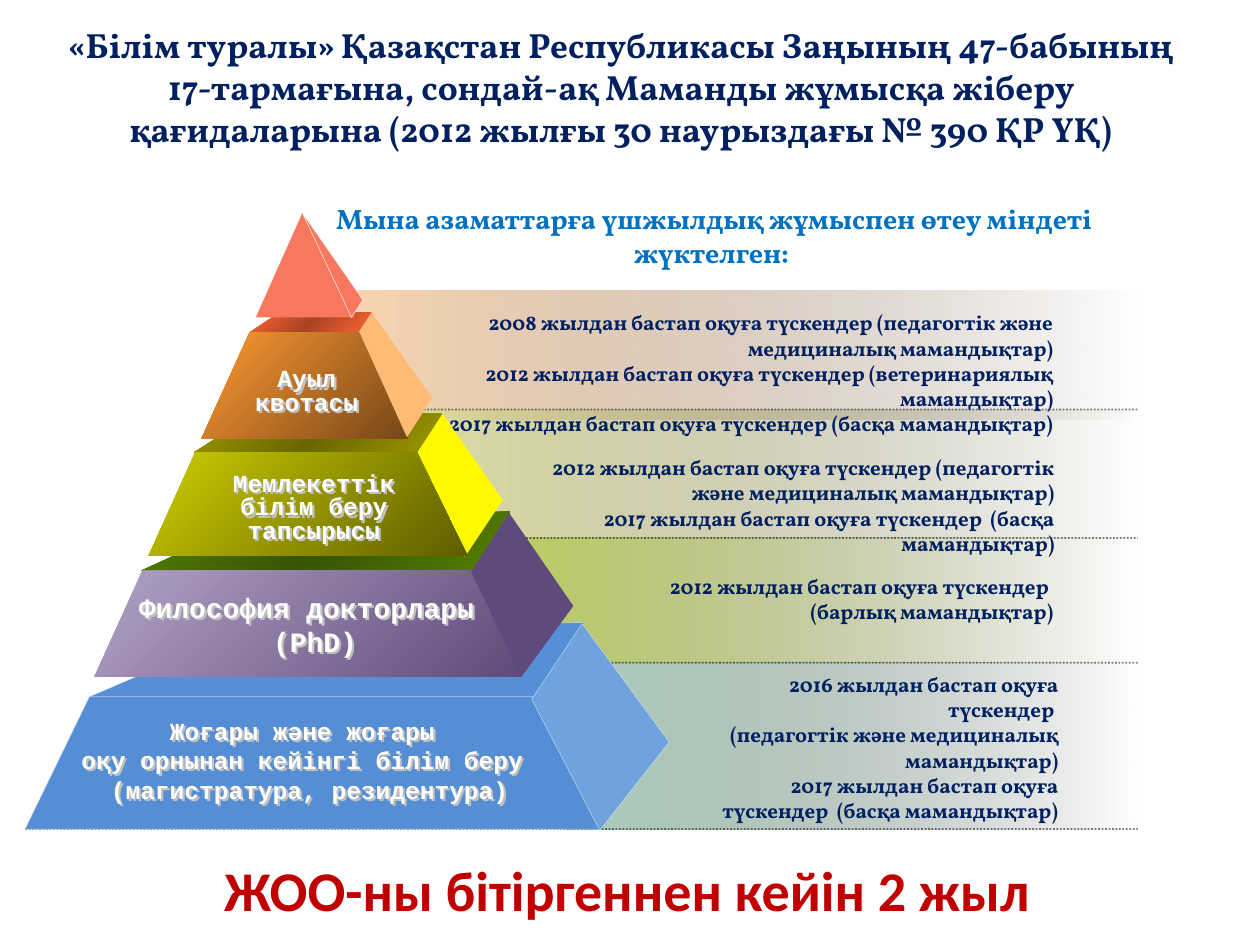
from dataclasses import dataclass

from lxml.etree import SubElement
from pptx import Presentation
from pptx.dml.color import RGBColor
from pptx.enum.dml import MSO_LINE
from pptx.enum.shapes import MSO_CONNECTOR, MSO_SHAPE
from pptx.enum.text import MSO_ANCHOR, PP_ALIGN
from pptx.oxml.ns import qn
from pptx.util import Pt

SCALE = 9144
CENTER, RIGHT = PP_ALIGN.CENTER, PP_ALIGN.RIGHT
TOP, MIDDLE = MSO_ANCHOR.TOP, MSO_ANCHOR.MIDDLE
RECT, LINE, DOTS = MSO_SHAPE.RECTANGLE, MSO_CONNECTOR.STRAIGHT, MSO_LINE.ROUND_DOT


@dataclass(frozen=True)
class Theme:
    """Fonts, type sizes and colours of the slide."""
    serif: str = "Vollkorn"
    mono: str = "Courier New"
    sans: str = "Calibri"
    title: int = 20
    lead: int = 16
    note: int = 12
    label: int = 14
    foot: int = 32
    navy: str = "002060"
    blue: str = "0070C0"
    red: str = "C00000"
    white: str = "FFFFFF"
    black: str = "000000"
    shade: str = "C0C0C0"
    edge: str = "C6D9F1"
    peach: tuple = ("FFD8B1", "766452")
    teal: tuple = ("ACCEBD", "505F57")
    sand: tuple = ("E2E0A0", "69684A")
    lime: tuple = ("BED25A", "58612A")
    sky: tuple = ("5590D7", "558ED5", "70A2DE")
    plum: tuple = ("B3A2C7", "604A7B")
    green: tuple = ("558000", "385500", "558000")
    moss: tuple = ("9E9A00", "696600", "9E9A00")
    gold: tuple = ("CCCC00", "5E5E00")
    lemon: str = "FEF800"
    rust: tuple = ("FF6535", "A94323", "FF6535")
    amber: tuple = ("FF9933", "764718")
    cream: str = "FFBA75"
    coral: str = "F7785F"


class Deck:
    """Draws each kind of element on the current slide."""

    def __init__(self, theme, wide, high):
        """Start a deck with one blank slide."""
        self.theme = theme
        self.file = Presentation()
        self.file.slide_width, self.file.slide_height = self.emu(wide, high)
        self.shapes = self.file.slides.add_slide(self.file.slide_layouts[6]).shapes

    def emu(self, *marks):
        """Turn px into EMU."""
        return [mark * SCALE for mark in marks]

    def paint(self, shape, fill, edge=None, angle=45, fade=False):
        """Fill a shape with one colour or a gradient."""
        shape.shadow.inherit = False
        if isinstance(fill, str):
            shape.fill.solid()
            shape.fill.fore_color.rgb = RGBColor.from_string(fill)
        else:
            shape.fill.gradient()
            shape.fill.gradient_angle = (360 - angle) % 360
            stops = shape.element.spPr.find(".//" + qn("a:gsLst"))
            stops.clear()
            for rank, tone in enumerate(fill):
                stop = SubElement(stops, qn("a:gs"), pos=str(100000 * rank // (len(fill) - 1)))
                color = SubElement(stop, qn("a:srgbClr"), val=tone)
            if fade:
                SubElement(color, qn("a:alpha"), val="0")
        if edge:
            shape.line.color.rgb = RGBColor.from_string(edge)
            shape.line.width = Pt(0.25)
        else:
            shape.line.fill.background()

    def band(self, box, fill):
        """Add a band that fades out to the right."""
        self.paint(self.shapes.add_shape(RECT, *self.emu(*box)), fill, angle=0, fade=True)

    def rule(self, left, right, y):
        """Add a level dotted line."""
        line = self.shapes.add_connector(LINE, *self.emu(left, y, right, y))
        line.line.color.rgb = RGBColor.from_string(self.theme.black)
        line.line.width = Pt(1)
        line.line.dash_style = DOTS
        props = line.element.spPr
        SubElement(props.find(".//" + qn("a:srgbClr")), qn("a:alpha"), val="50000")
        SubElement(props, qn("a:effectLst"))

    def face(self, fill, edge, start, *points):
        """Add one closed face of the pyramid."""
        pen = self.shapes.build_freeform(*start, scale=SCALE)
        pen.add_line_segments(points, close=True)
        self.paint(pen.convert_to_shape(), fill, edge)

    def text(self, box, paras, font, size, color, align=CENTER,
             anchor=TOP, wrap=True, lead=None):
        """Add a text box, with a line break at each newline."""
        shape = self.shapes.add_textbox(*self.emu(*box))
        frame = shape.text_frame
        frame.word_wrap, frame.vertical_anchor = wrap, anchor
        for rank, words in enumerate(paras):
            para = frame.add_paragraph() if rank else frame.paragraphs[0]
            para.alignment, para.line_spacing = align, lead
            for turn, part in enumerate(words.split("\n")):
                if turn:
                    para.add_line_break()
                run = para.add_run()
                run.text = part
                run.font.name, run.font.size, run.font.bold = font, Pt(size), True
                run.font.color.rgb = RGBColor.from_string(color)
        return shape

    def note(self, box, *paras):
        """Add a note set flush right."""
        look = self.theme
        self.text(box, paras, look.serif, look.note, look.navy, RIGHT)

    def label(self, box, *paras, size=None, **more):
        """Add a label with a drop shadow on a pyramid tier."""
        look = self.theme
        shape = self.text(box, paras, look.mono, size or look.label, look.white, **more)
        cast = SubElement(shape.element.spPr, qn("a:effectLst"))
        drop = SubElement(cast, qn("a:outerShdw"), dist="22000", dir="2700000",
                          algn="ctr", rotWithShape="0")
        SubElement(drop, qn("a:srgbClr"), val=look.shade)


def main():
    """Build the slide and save it."""
    look = Theme()
    deck = Deck(look, 1000, 750)
    deck.text((43, 13, 900, 111), [
        "«Білім туралы» Қазақстан Республикасы Заңының 47-бабының 17-тармағына, "
        "сондай-ақ Маманды жұмысқа жіберу қағидаларына "
        "(2012 жылғы 30 наурыздағы № 390 ҚР ҮҚ)"],
        look.serif, look.title, look.navy, anchor=MIDDLE)

    for box, fill in [
        ((248, 231, 655, 102), look.peach),
        ((449, 526, 454, 132), look.teal),
        ((304, 325, 601, 102), look.sand),
        ((368, 427, 535, 99), look.lime),
    ]:
        deck.band(box, fill)
    for left, y in [(284, 325), (368, 427), (433, 526), (20, 658)]:
        deck.rule(left, 903, y)

    deck.note((531, 528, 319, 131),
              "2016 жылдан бастап оқуға түскендер \n(педагогтік және медициналық мамандықтар)",
              "2017 жылдан бастап оқуға түскендер  (басқа мамандықтар)")
    deck.note((449, 450, 397, 50),
              "2012 жылдан бастап оқуға түскендер ", "(барлық мамандықтар)")
    deck.note((390, 356, 457, 91),
              "2012 жылдан бастап оқуға түскендер (педагогтік және медициналық мамандықтар)\n"
              "2017 жылдан бастап оқуға түскендер  (басқа мамандықтар)")
    deck.note((288, 241, 558, 111),
              "2008 жылдан бастап оқуға түскендер (педагогтік және медициналық мамандықтар)",
              " 2012 жылдан бастап оқуға түскендер (ветеринариялық мамандықтар)\n"
              "2017 жылдан бастап оқуға түскендер (басқа мамандықтар)")

    for fill, edge, *points in [
        (look.sky[0], look.edge, (71, 553), (424, 553), (464, 494), (194, 500)),
        (look.sky[1], look.edge, (20, 658), (476, 658), (423, 553), (71, 553)),
        (look.sky[2], look.edge, (476, 659), (531, 589), (462, 495), (422, 555)),
        (look.green, None, (112, 453), (375, 453), (405, 406), (204, 411)),
        (look.plum, None, (75, 537), (414, 537), (375, 453), (113, 453)),
        (look.plum[1], None, (414, 537), (455, 481), (404, 407), (374, 454)),
        (look.lemon, None, (330, 359), (369, 442), (399, 397), (351, 328)),
        (look.moss, None, (154, 359), (331, 359), (351, 328), (203, 328)),
        (look.gold, None, (118, 441), (371, 441), (331, 359), (155, 359)),
        (look.rust, None, (198, 264), (284, 264), (295, 248), (222, 248)),
        (look.amber, None, (160, 348), (324, 348), (286, 264), (198, 264)),
        (look.cream, None, (323, 347), (343, 316), (295, 248), (285, 263)),
        (look.coral, None, (203, 252), (281, 252), (240, 169)),
        (look.coral, look.white, (279, 252), (288, 238), (240, 169)),
    ]:
        deck.face(fill, edge, *points)

    deck.label((118, 371, 274, 67), "Мемлекеттік ", "білім беру ", "тапсырысы ", lead=0.8)
    deck.label((176, 288, 135, 49), "Ауыл квотасы", lead=0.8)
    deck.label((36, 574, 420, 58), "Жоғары және жоғары ", "оқу орнынан кейінгі білім беру ",
               "(магистратура, резидентура)", anchor=MIDDLE, wrap=False)
    deck.label((85, 480, 330, 31), "Философия докторлары ", "(PhD)",
               size=look.lead, anchor=MIDDLE, wrap=False)

    deck.text((241, 155, 652, 64),
              ["Мына азаматтарға үшжылдық жұмыспен өтеу міндеті жүктелген: "],
              look.serif, look.lead, look.blue)
    deck.text((148, 674, 700, 62), ["ЖОО-ны бітіргеннен кейін 2 жыл"],
              look.sans, look.foot, look.red)
    deck.file.save("out.pptx")


if __name__ == "__main__":
    main()
